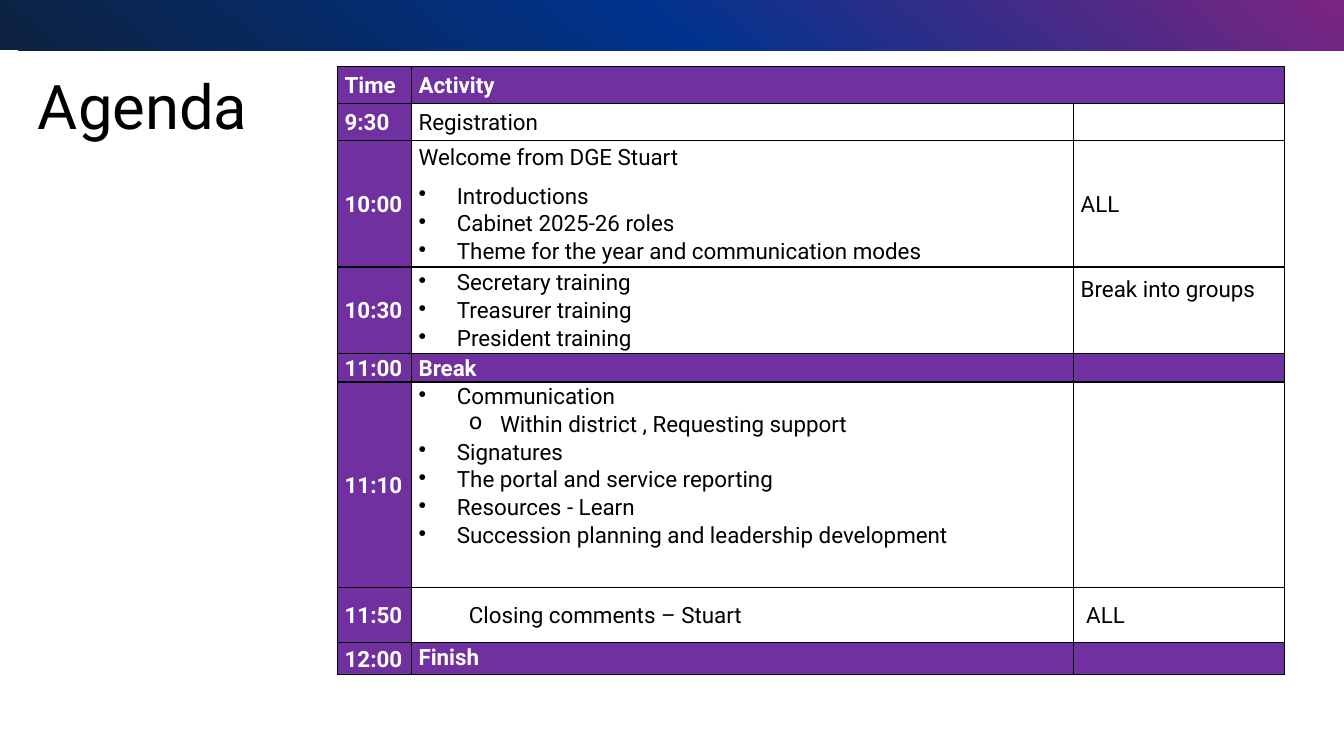
from copy import deepcopy
from dataclasses import dataclass

from lxml.etree import SubElement
from pptx import Presentation
from pptx.dml.color import RGBColor
from pptx.enum.shapes import MSO_SHAPE
from pptx.enum.text import MSO_ANCHOR
from pptx.oxml.ns import qn
from pptx.util import Pt


@dataclass(frozen=True)
class Theme:
    """Colours, font and type sizes of the slide."""
    font: str = "Roboto"
    title: int = 44
    body: int = 16
    black: str = "000000"
    white: str = "FFFFFF"
    purple: str = "7030A0"
    band: tuple = ((0, "0D2240"), (0.5, "00338D"), (0.99, "7A2582"))


THEME = Theme()
MID, TOP = MSO_ANCHOR.MIDDLE, MSO_ANCHOR.TOP
WIDTHS = (52.8, 473, 150.6)
STYLES = {
    "plain": dict(after=8),
    "dot": dict(mark="•", left=27.4, hang=-27.4),
    "ring": dict(mark="o", left=58.3, hang=-22.3, level=1),
    "shift": dict(left=36),
}

# Each row: height, time, activity lines, note, filled
ROWS = (
    (26.8, "Time", [("plain", "Activity")], "", True),
    (26.4, "9:30", [("plain", "Registration")], "", False),
    (88, "10:00", [("plain", "Welcome from DGE Stuart"),
                   ("dot", "Introductions"),
                   ("dot", "Cabinet 2025-26 roles"),
                   ("dot", "Theme for the year and communication modes")],
     "ALL", False),
    (59.4, "10:30", [("dot", "Secretary training"),
                     ("dot", "Treasurer training"),
                     ("dot", "President training")],
     "Break into groups", False),
    (20, "11:00", [("plain", "Break")], "", True),
    (147, "11:10", [("dot", "Communication"),
                    ("ring", "Within district , Requesting support"),
                    ("dot", "Signatures"),
                    ("dot", "The portal and service reporting"),
                    ("dot", "Resources - Learn"),
                    ("dot", "Succession planning and leadership development")],
     "", False),
    (39.3, "11:50", [("shift", "Closing comments – Stuart")], " ALL", False),
    (22.9, "12:00", [("plain", "Finish")], "", True),
)
ANCHORS = {("11:10", 1): TOP, ("10:30", 2): TOP, ("12:00", 1): TOP}


def write(para, text, size=THEME.body, color=THEME.black, bold=False,
          line=1.07, after=0, mark=None, left=0, hang=0, level=0):
    """Put formatted text into a paragraph."""
    props = para._p.get_or_add_pPr()
    if left:
        props.set("marL", str(Pt(left)))
        props.set("indent", str(Pt(hang)))
    if mark:
        SubElement(props, qn("a:buChar")).set("char", mark)
    para.level = level
    para.line_spacing = line
    para.space_after = Pt(after)
    if not text:
        SubElement(para._p, qn("a:endParaRPr")).set("sz", str(size * 100))
        return
    run = para.add_run()
    run.text = text
    run.font.name = THEME.font
    run.font.size = Pt(size)
    run.font.bold = bold
    run.font.color.rgb = RGBColor.from_string(color)


def draw_band(slide, x, y, wide, high):
    """Draw the gradient band."""
    band = slide.shapes.add_shape(MSO_SHAPE.RECTANGLE, Pt(x), Pt(y), Pt(wide), Pt(high))
    band.shadow.inherit = False
    band.line.fill.background()
    band.fill.gradient()
    band.fill.gradient_angle = 50
    stops = band._element.spPr.find(".//" + qn("a:gsLst"))
    stops.append(deepcopy(stops[0]))
    for stop, (place, color) in zip(band.fill.gradient_stops, THEME.band):
        stop.position = place
        stop.color.rgb = RGBColor.from_string(color)


def draw_title(slide, x, y, wide, high):
    """Draw the slide title."""
    frame = slide.shapes.add_textbox(Pt(x), Pt(y), Pt(wide), Pt(high)).text_frame
    frame.word_wrap = True
    frame.vertical_anchor = MID
    write(frame.paragraphs[0], "Agenda", size=THEME.title, line=0.9)


def style_cell(cell, filled, anchor):
    """Set the borders, fill, margins and anchor of a cell."""
    props = cell._tc.get_or_add_tcPr()
    for side in "LRTB":
        edge = SubElement(props, qn("a:ln" + side), w=str(Pt(1)))
        paint = SubElement(edge, qn("a:solidFill"))
        SubElement(paint, qn("a:srgbClr"), val=THEME.black)
    if filled:
        cell.fill.solid()
        cell.fill.fore_color.rgb = RGBColor.from_string(THEME.purple)
    else:
        cell.fill.background()
    cell.margin_left = cell.margin_right = Pt(5.2)
    cell.margin_top = cell.margin_bottom = 0
    cell.vertical_anchor = anchor


def draw_table(slide, x, y, wide, high):
    """Draw the agenda table."""
    table = slide.shapes.add_table(len(ROWS), len(WIDTHS), Pt(x), Pt(y), Pt(wide), Pt(high)).table
    table.first_row = table.horz_banding = False
    for col, width in zip(table.columns, WIDTHS):
        col.width = Pt(width * wide / sum(WIDTHS))
    total = sum(row[0] for row in ROWS)
    for i, (tall, time, lines, note, filled) in enumerate(ROWS):
        table.rows[i].height = Pt(tall * high / total)
        parts = ([("plain", time)], lines, [("plain", note)])
        for j, part in enumerate(parts):
            cell = table.cell(i, j)
            dark = filled or j == 0
            style_cell(cell, dark, ANCHORS.get((time, j), MID))
            for k, (kind, text) in enumerate(part):
                frame = cell.text_frame
                para = frame.add_paragraph() if k else frame.paragraphs[0]
                write(para, text, bold=dark,
                      color=THEME.white if dark else THEME.black, **STYLES[kind])
    table.cell(3, 2).margin_top = Pt(6)
    table.cell(0, 1).merge(table.cell(0, 2))


def main():
    """Build the agenda slide and save it."""
    deck = Presentation()
    deck.slide_width, deck.slide_height = Pt(960), Pt(540)
    slide = deck.slides.add_slide(deck.slide_layouts[6])
    draw_band(slide, 0, 0, 960, 36)
    draw_title(slide, 20, 26, 828, 104.4)
    draw_table(slide, 241, 47.4, sum(WIDTHS), sum(row[0] for row in ROWS))
    deck.save("out.pptx")


if __name__ == "__main__":
    main()
